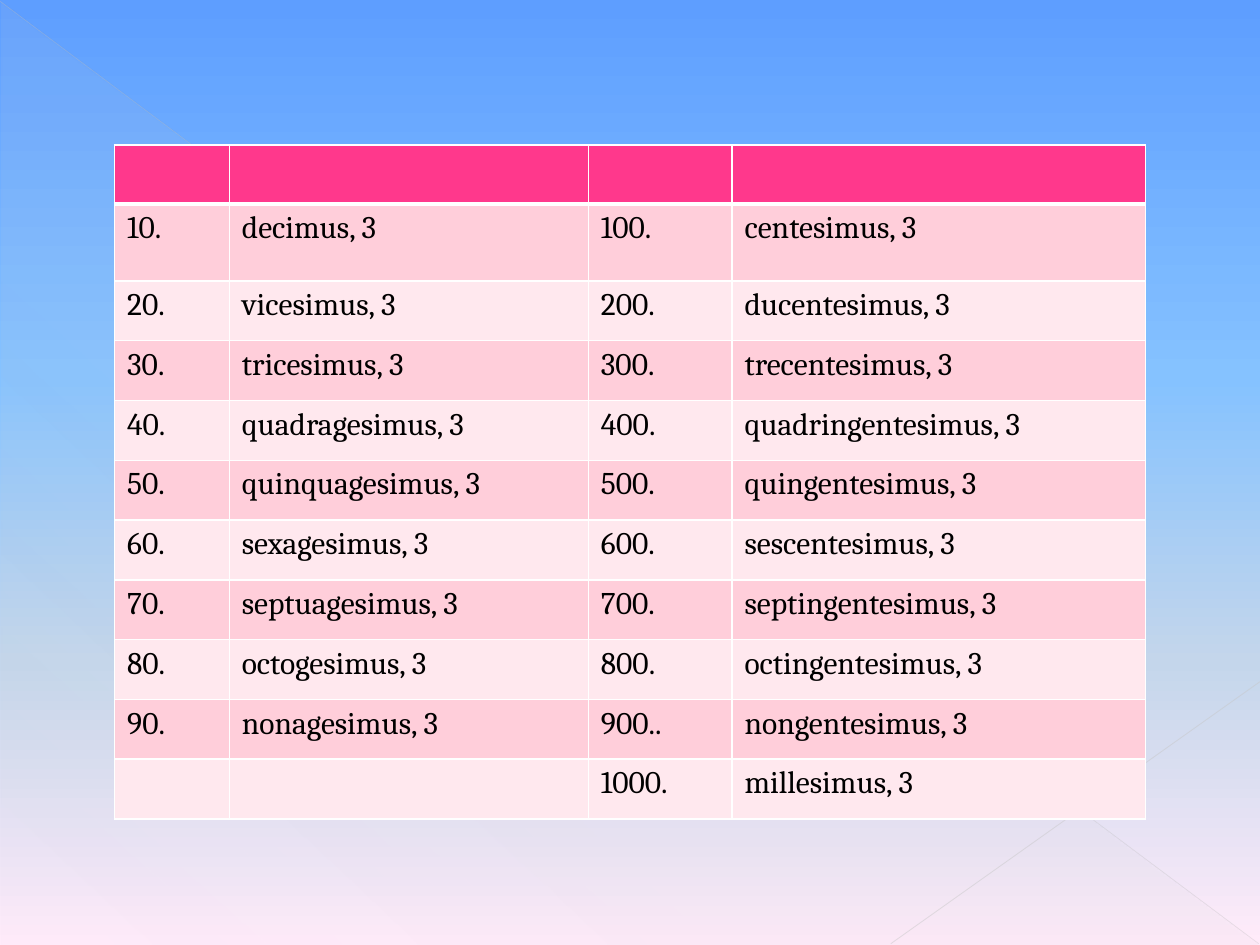
import pptx
import pptx.dml.color
import pptx.enum.shapes
import pptx.oxml.ns
import pptx.oxml.xmlchemy
import pptx.util
from lxml import etree
from pptx.dml.color import RGBColor
from pptx.oxml.ns import qn
from pptx.util import Inches, Pt

WHITE = RGBColor(0xFF, 0xFF, 0xFF)
BLACK = RGBColor(0x00, 0x00, 0x00)
HEADER_PINK = RGBColor(0xFF, 0x38, 0x8C)
BAND_PINKS = (RGBColor(0xFF, 0xCE, 0xDA), RGBColor(0xFF, 0xE8, 0xEE))
SKY_TOP = RGBColor(0x5E, 0x9E, 0xFF)
SKY_LIGHT = RGBColor(0x85, 0xC2, 0xFF)
SKY_PALE = RGBColor(0xC4, 0xD6, 0xEB)
SKY_BOTTOM = RGBColor(0xFF, 0xEB, 0xFA)
TRIANGLE_GREY = RGBColor(0xD2, 0xD2, 0xD2)
LONG_LINE_GREY = RGBColor(0xBF, 0xBF, 0xBF)
SHORT_LINE_GREY = RGBColor(0xC6, 0xC6, 0xC6)

FONT = "Cambria"
COLUMN_WIDTHS = (0.91, 2.85, 1.14, 3.28)
TABLE_HEIGHT = 5.35
HEADER_HEIGHT = 0.47
FIRST_ROW_HEIGHT = 0.61

ORDINALS = (
    ("10.", "decimus, 3", "100.", "centesimus, 3"),
    ("20.", "vicesimus, 3", "200.", "ducentesimus, 3"),
    ("30.", "tricesimus, 3", "300.", "trecentesimus, 3"),
    ("40.", "quadragesimus, 3", "400.", "quadringentesimus, 3"),
    ("50.", "quinquagesimus, 3", "500.", "quingentesimus, 3"),
    ("60.", "sexagesimus, 3", "600.", "sescentesimus, 3"),
    ("70.", "septuagesimus, 3", "700.", "septingentesimus, 3"),
    ("80.", "octogesimus, 3", "800.", "octingentesimus, 3"),
    ("90.", "nonagesimus, 3", "900..", "nongentesimus, 3"),
    ("", "", "1000.", "millesimus, 3"),
)


def add_colour(parent, colour, opacity=100):
    node = etree.SubElement(parent, qn("a:srgbClr"), val=str(colour))
    if opacity < 100:
        etree.SubElement(node, qn("a:alpha"), val=str(opacity * 1000))


def set_gradient(owner, fill, stops, angle):
    fill.gradient()
    gradient = owner.find(".//" + qn("a:gradFill"))
    for child in list(gradient):
        gradient.remove(child)
    stop_list = etree.SubElement(gradient, qn("a:gsLst"))
    for position, colour, opacity in stops:
        stop = etree.SubElement(stop_list, qn("a:gs"), pos=str(position * 1000))
        add_colour(stop, colour, opacity)
    etree.SubElement(gradient, qn("a:lin"), ang=str(angle * 60000), scaled="0")


def add_corner_triangle(page):
    triangle = page.shapes.add_shape(
        pptx.enum.shapes.MSO_SHAPE.RIGHT_TRIANGLE,
        Inches(0.01), Inches(0.02), Inches(9.98), Inches(7.48))
    triangle.shadow.inherit = False
    triangle.line.fill.background()
    stops = [(0, TRIANGLE_GREY, 10), (70, TRIANGLE_GREY, 8), (100, TRIANGLE_GREY, 1)]
    set_gradient(triangle._element.spPr, triangle.fill, stops, 133)


def add_faint_line(page, start, end, colour, width, opacity):
    line = page.shapes.add_connector(
        pptx.enum.shapes.MSO_CONNECTOR.STRAIGHT,
        *(Inches(value) for value in start + end))
    line.line.width = Pt(width)
    line.line.color.rgb = colour
    properties = line._element.spPr
    colour_node = properties.find(".//" + qn("a:srgbClr"))
    etree.SubElement(colour_node, qn("a:alpha"), val=str(opacity * 1000))
    etree.SubElement(properties, qn("a:effectLst"))


def set_borders(cell, top, bottom):
    properties = cell._tc.get_or_add_tcPr()
    for side, width in (("L", 1), ("R", 1), ("T", top), ("B", bottom)):
        border = etree.SubElement(properties, qn("a:ln" + side), w=str(Pt(width)))
        add_colour(etree.SubElement(border, qn("a:solidFill")), WHITE)


def fill_cell(cell, text, colour, top=1, bottom=1):
    set_borders(cell, top, bottom)
    cell.fill.solid()
    cell.fill.fore_color.rgb = colour
    if text:
        span = cell.text_frame.paragraphs[0].add_run()
        span.text = text
        span.font.name = FONT
        span.font.size = Pt(18)
        span.font.color.rgb = BLACK


def add_ordinals_table(page):
    table = page.shapes.add_table(
        len(ORDINALS) + 1, len(COLUMN_WIDTHS),
        Inches(0.91), Inches(1.15),
        Inches(sum(COLUMN_WIDTHS)), Inches(TABLE_HEIGHT)).table
    for column, width in zip(table.columns, COLUMN_WIDTHS):
        column.width = Inches(width)
    other_rows = len(ORDINALS) - 1
    other_height = (TABLE_HEIGHT - HEADER_HEIGHT - FIRST_ROW_HEIGHT) / other_rows
    heights = [HEADER_HEIGHT, FIRST_ROW_HEIGHT] + [other_height] * other_rows
    for row, height in zip(table.rows, heights):
        row.height = Inches(height)
    for cell in table.rows[0].cells:
        fill_cell(cell, "", HEADER_PINK, bottom=3)
    for index, words in enumerate(ORDINALS):
        for cell, word in zip(table.rows[index + 1].cells, words):
            fill_cell(cell, word, BAND_PINKS[index % 2], top=1 if index else 3)


def main():
    deck = pptx.Presentation()
    deck.slide_width = Inches(10)
    deck.slide_height = Inches(7.5)
    page = deck.slides.add_slide(deck.slide_layouts[6])
    sky = [(0, SKY_TOP, 100), (40, SKY_LIGHT, 100),
           (70, SKY_PALE, 100), (100, SKY_BOTTOM, 100)]
    set_gradient(page._element, page.background.fill, sky, 90)
    add_corner_triangle(page)
    add_faint_line(page, (0, 0.01), (9.99, 7.49), LONG_LINE_GREY, 0.39, 35)
    add_faint_line(page, (10, 5.41), (7.07, 7.49), SHORT_LINE_GREY, 0.47, 45)
    add_ordinals_table(page)
    deck.save("out.pptx")


if __name__ == "__main__":
    main()
